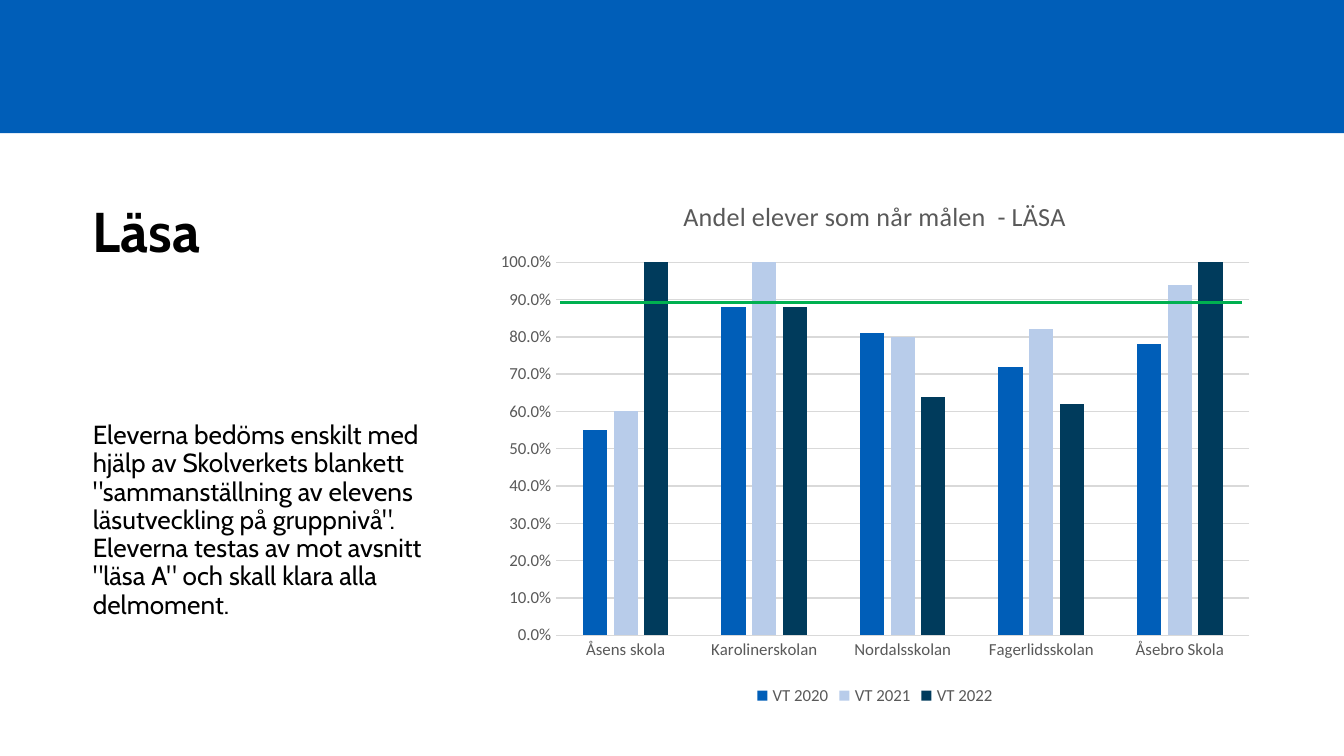
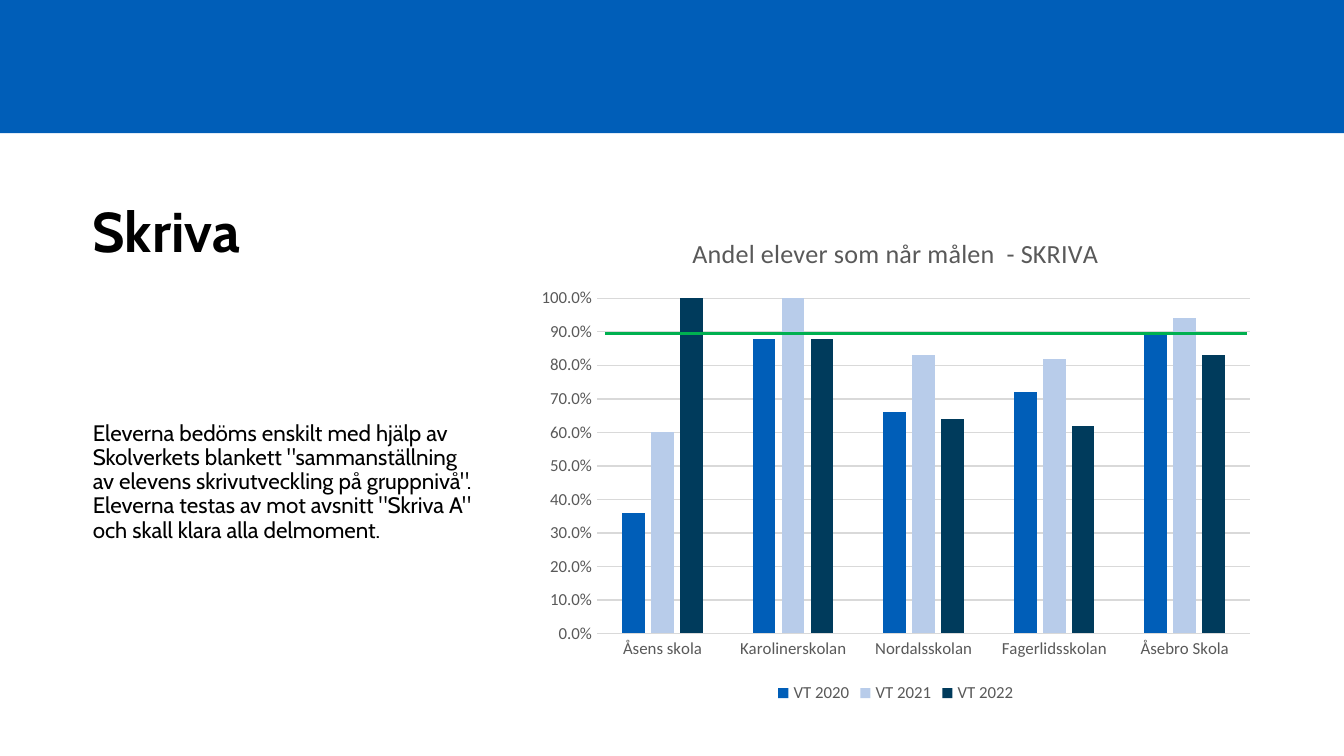
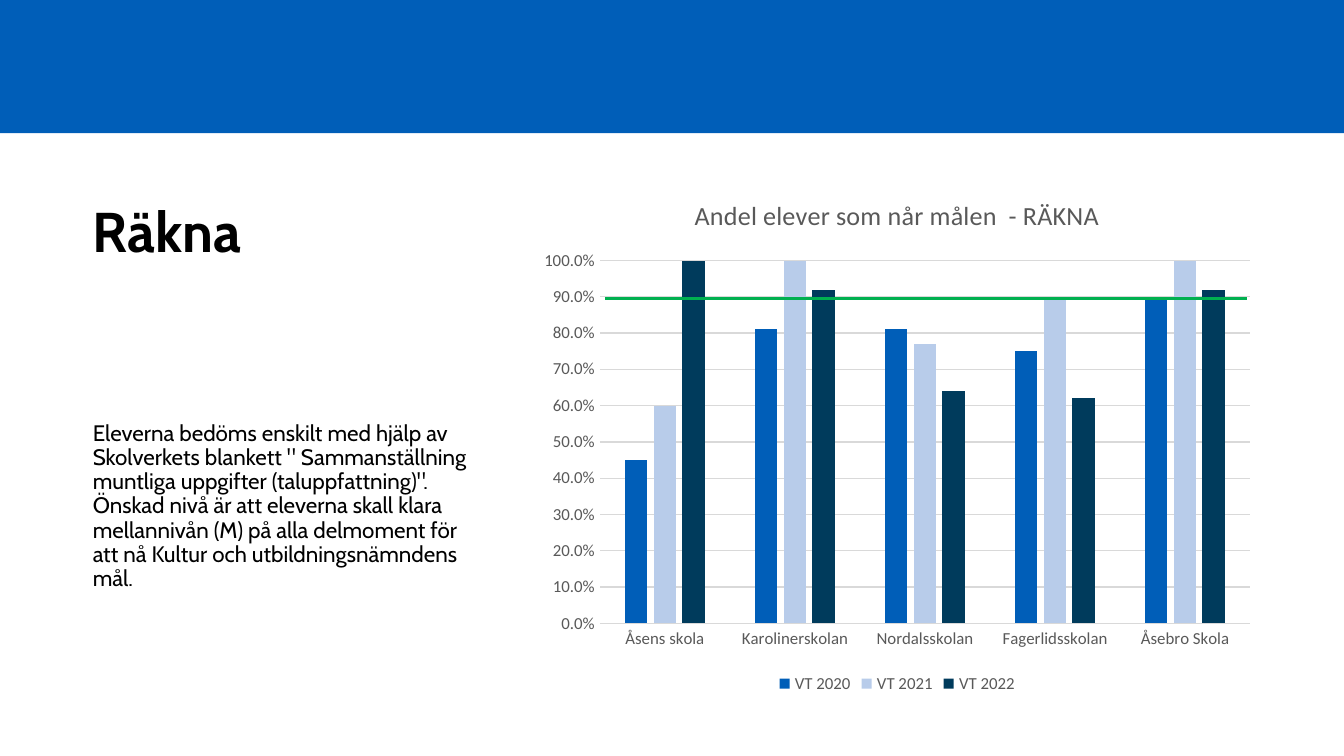
import pptx
import pptx.chart.data
import pptx.dml.color
import pptx.enum.chart
import pptx.enum.shapes
import pptx.enum.text
import pptx.util
from dataclasses import dataclass
from lxml import etree

Inches = pptx.util.Inches
Pt = pptx.util.Pt
RGB = pptx.dml.color.RGBColor.from_string
NONE = pptx.enum.chart.XL_TICK_MARK.NONE
ANCHOR = pptx.enum.text.MSO_ANCHOR


@dataclass(frozen=True)
class Theme:
    blue: str = "005EB8"
    pale: str = "B8CCEA"
    navy: str = "003B5C"
    green: str = "00B050"
    black: str = "000000"
    gray: str = "595959"
    grid: str = "D9D9D9"
    text: str = "Cabin"
    chart: str = "Calibri"
    head: int = 30
    title: int = 14
    label: int = 9


THEME = Theme()
SCHOOLS = ["Åsens skola", "Karolinerskolan", "Nordalsskolan", "Fagerlidsskolan", "Åsebro Skola"]
TERMS = {"VT 2020": THEME.blue, "VT 2021": THEME.pale, "VT 2022": THEME.navy}
HEAD_BOX = (0.59, 1.22, 8.06, 0.8)
BODY_BOX = (0.59, 3.09, 3.03, 2.11)

PAGES = [
    {
        "head": "Läsa",
        "body": 'Eleverna bedöms enskilt med hjälp av Skolverkets blankett "sammanställning av elevens '
                'läsutveckling på gruppnivå". Eleverna testas av mot avsnitt "läsa A" och skall klara '
                'alla delmoment.',
        "size": 14,
        "box": (3.61, 1.31, 5.8, 3.98),
        "goal": (4.17, 9.24, 2.25),
        "rows": [
            [0.55, 0.88, 0.81, 0.72, 0.78],
            [0.6, 1, 0.8, 0.82, 0.94],
            [1, 0.88, 0.64, 0.62, 1],
        ],
    },
    {
        "head": "Skriva",
        "body": 'Eleverna bedöms enskilt med hjälp av Skolverkets blankett "sammanställning av elevens '
                'skrivutveckling på gruppnivå". Eleverna testas av mot avsnitt "Skriva A" och skall '
                'klara alla delmoment.',
        "size": 12,
        "box": (3.92, 1.59, 5.49, 3.68),
        "goal": (4.5, 9.28, 2.48),
        "rows": [
            [0.36, 0.88, 0.66, 0.72, 0.89],
            [0.6, 1, 0.83, 0.82, 0.94],
            [1, 0.88, 0.64, 0.62, 0.83],
        ],
    },
    {
        "head": "Räkna",
        "body": 'Eleverna bedöms enskilt med hjälp av Skolverkets blankett " Sammanställning muntliga '
                'uppgifter (taluppfattning)". Önskad nivå är att eleverna skall klara mellannivån (M) '
                'på alla delmoment för att nå Kultur och utbildningsnämndens mål.',
        "size": 12,
        "box": (3.94, 1.3, 5.47, 3.9),
        "goal": (4.5, 9.28, 2.22),
        "rows": [
            [0.45, 0.81, 0.81, 0.75, 0.89],
            [0.6, 1, 0.77, 0.9, 1],
            [1, 0.92, 0.64, 0.62, 0.92],
        ],
    },
]


def apply(item, form):
    for name, value in form.items():
        setattr(item, name, value)


def style(font, face, size, color, bold=False):
    apply(font, {"name": face, "size": Pt(size), "bold": bold})
    font.color.rgb = RGB(color)


def paint(line, color, width):
    line.color.rgb = RGB(color)
    line.width = Pt(width)


def add_band(deck, slide):
    band = slide.shapes.add_shape(
        pptx.enum.shapes.MSO_SHAPE.RECTANGLE, 0, 0, deck.slide_width, Inches(0.99))
    band.shadow.inherit = False
    band.fill.solid()
    band.fill.fore_color.rgb = RGB(THEME.blue)
    band.line.fill.background()
    deck.slide_master.shapes._spTree.insert(2, band._element)


def fill_holder(holder, text, box, size, anchor, bold=False):
    apply(holder, dict(zip(("left", "top", "width", "height"), map(Inches, box))))
    frame = holder.text_frame
    frame.text = text
    apply(frame, {
        "word_wrap": True,
        "auto_size": pptx.enum.text.MSO_AUTO_SIZE.NONE,
        "vertical_anchor": anchor,
    })
    para = frame.paragraphs[0]
    apply(para, {
        "alignment": pptx.enum.text.PP_ALIGN.LEFT,
        "line_spacing": 0.9,
        "space_before": Pt(0),
    })
    props = para._p.get_or_add_pPr()
    props.set("marL", "0")
    props.set("indent", "0")
    etree.SubElement(props, pptx.oxml.ns.qn("a:buNone"))
    style(para.runs[0].font, THEME.text, size, THEME.black, bold)


def add_bars(slide, title, rows, box):
    data = pptx.chart.data.CategoryChartData(number_format="0.0%")
    data.categories = SCHOOLS
    for term, row in zip(TERMS, rows):
        data.add_series(term, row)
    kind = pptx.enum.chart.XL_CHART_TYPE.COLUMN_CLUSTERED
    chart = slide.shapes.add_chart(kind, *map(Inches, box), data).chart
    style(chart.font, THEME.chart, THEME.label, THEME.gray)

    chart.has_title = True
    chart.chart_title.include_in_layout = False
    frame = chart.chart_title.text_frame
    frame.text = title
    style(frame.paragraphs[0].runs[0].font, THEME.chart, THEME.title, THEME.gray)

    chart.has_legend = True
    apply(chart.legend, {
        "position": pptx.enum.chart.XL_LEGEND_POSITION.BOTTOM,
        "include_in_layout": False,
    })
    style(chart.legend.font, THEME.chart, THEME.label, THEME.gray)

    plot = chart.plots[0]
    apply(plot, {"gap_width": 219, "overlap": -27, "vary_by_categories": False})
    for bars, color in zip(plot.series, TERMS.values()):
        bars.format.fill.solid()
        bars.format.fill.fore_color.rgb = RGB(color)

    for axis in (chart.category_axis, chart.value_axis):
        apply(axis, {"major_tick_mark": NONE, "minor_tick_mark": NONE})
        style(axis.tick_labels.font, THEME.chart, THEME.label, THEME.gray)
    paint(chart.category_axis.format.line, THEME.grid, 0.75)
    scale = chart.value_axis
    apply(scale, {"minimum_scale": 0, "maximum_scale": 1, "major_unit": 0.1})
    apply(scale.tick_labels, {"number_format": "0.0%", "number_format_is_linked": False})
    scale.format.line.fill.background()
    paint(scale.major_gridlines.format.line, THEME.grid, 0.75)


def add_goal(slide, left, right, top):
    goal = slide.shapes.add_connector(
        pptx.enum.shapes.MSO_CONNECTOR.STRAIGHT,
        Inches(left), Inches(top), Inches(right), Inches(top))
    paint(goal.line, THEME.green, 1.5)
    etree.SubElement(goal._element.spPr, pptx.oxml.ns.qn("a:effectLst"))


def add_page(deck, page):
    slide = deck.slides.add_slide(deck.slide_layouts[1])
    head, body = slide.placeholders
    fill_holder(head, page["head"], HEAD_BOX, THEME.head, ANCHOR.BOTTOM, True)
    fill_holder(body, page["body"], BODY_BOX, page["size"], ANCHOR.TOP)
    title = f"Andel elever som når målen  - {page['head'].upper()}"
    add_bars(slide, title, page["rows"], page["box"])
    add_goal(slide, *page["goal"])


def main():
    deck = pptx.Presentation()
    apply(deck, {"slide_width": Inches(10), "slide_height": Inches(10 * 9 / 16)})
    for page in PAGES:
        add_page(deck, page)
    add_band(deck, deck.slides[0])
    deck.save("out.pptx")


if __name__ == "__main__":
    main()
